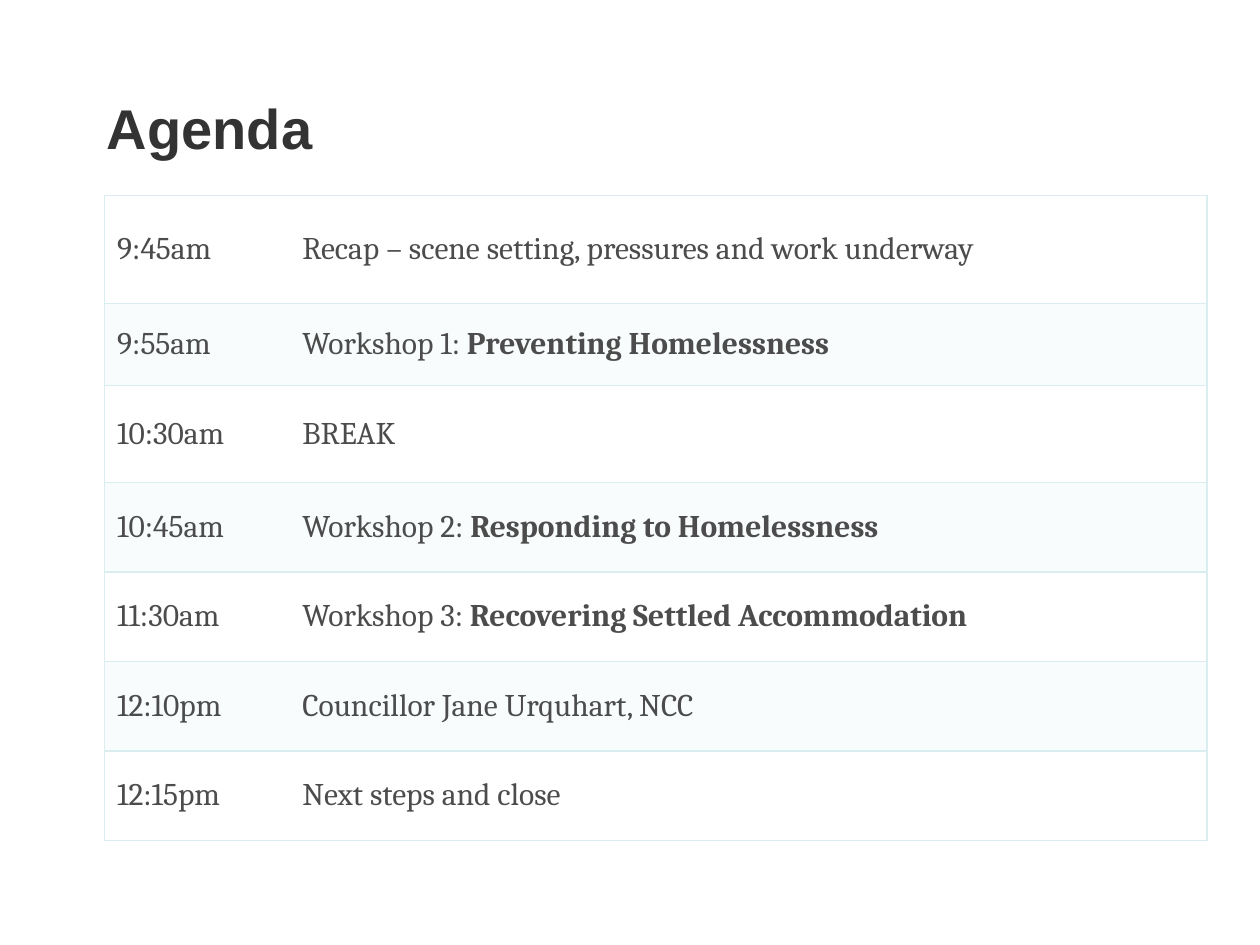
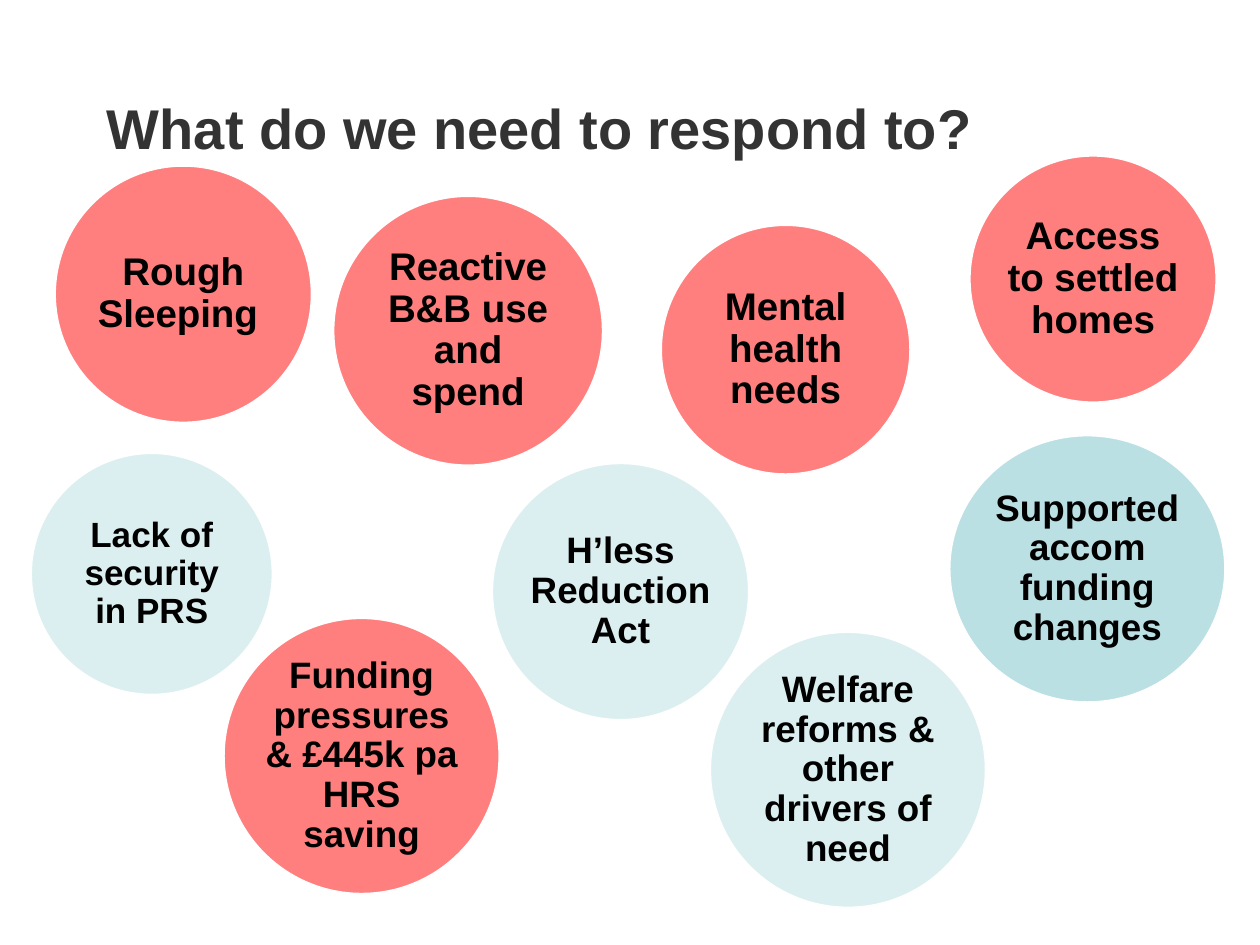
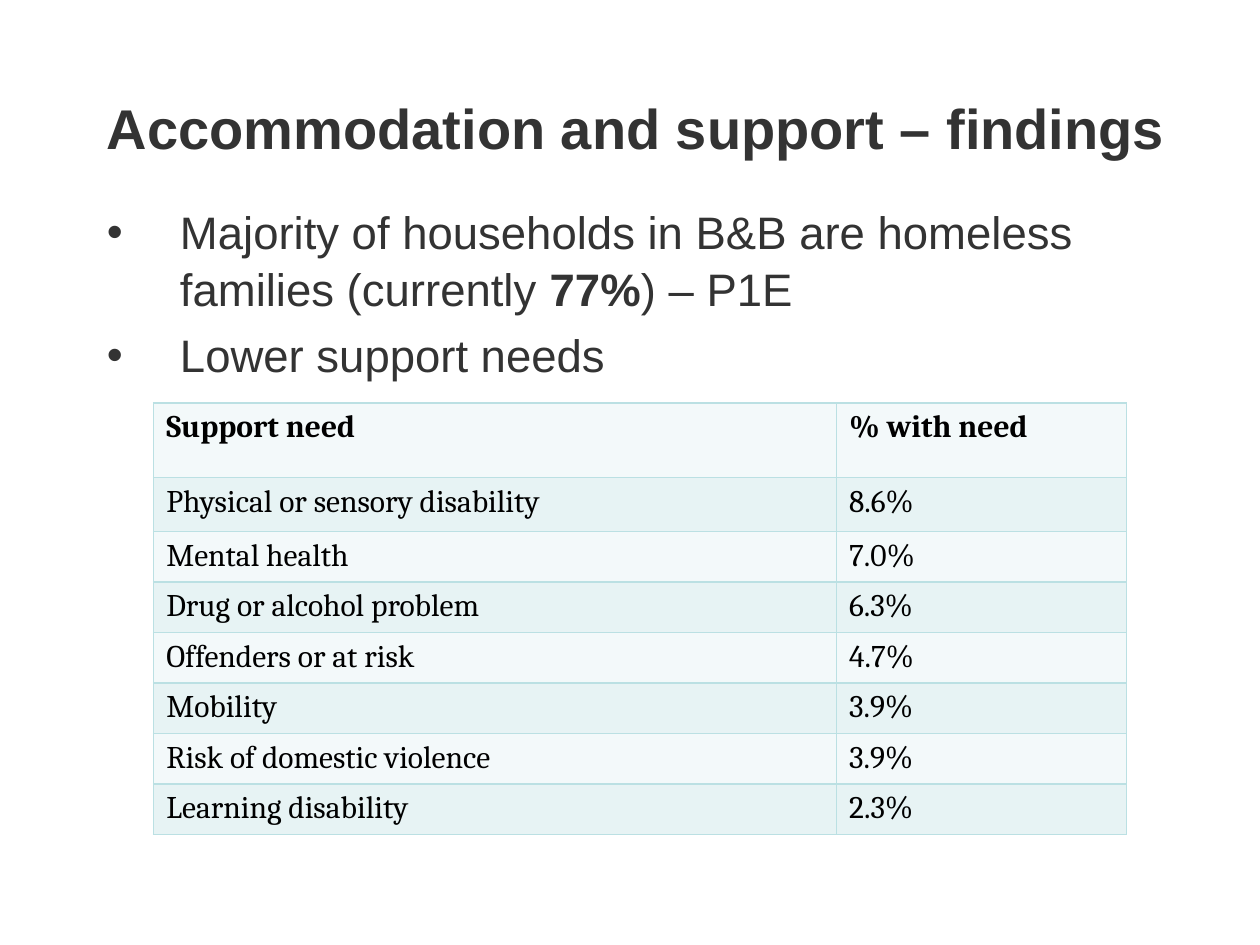
from lxml import etree
from pptx import Presentation
from pptx import util as u
from pptx.dml.color import RGBColor
from pptx.enum import shapes, text
from pptx.oxml.ns import qn

Inches, Pt = u.Inches, u.Pt

# Shared colours and fonts
BLACK = RGBColor(0x00, 0x00, 0x00)
WHITE = RGBColor(0xFF, 0xFF, 0xFF)
DARK = RGBColor(0x33, 0x33, 0x33)
GREY = RGBColor(0x4C, 0x4C, 0x4C)
RED = RGBColor(0xFF, 0x00, 0x00)
TEAL = RGBColor(0xBB, 0xE0, 0xE3)
PALE_TEAL = RGBColor(0xDA, 0xED, 0xEF)
AGENDA_BANDS = (WHITE, RGBColor(0xF8, 0xFC, 0xFC))
NEEDS_BANDS = (RGBColor(0xF3, 0xF9, 0xFA), RGBColor(0xE7, 0xF3, 0xF4))
HEAD_FONT, TABLE_FONT = "Arial", "Cambria"

# Slide content; asterisks enclose bold words
AGENDA = [
    ("9:45am", "Recap – scene setting, pressures and work underway"),
    ("9:55am", "Workshop 1: *Preventing Homelessness*"),
    ("10:30am", "BREAK"),
    ("10:45am", "Workshop 2: *Responding to Homelessness*"),
    ("11:30am", "Workshop 3: *Recovering Settled Accommodation*"),
    ("12:10pm", "Councillor Jane Urquhart, NCC"),
    ("12:15pm", "Next steps and close"),
]
# Left, top, width, height, colour, opacity in percent, text size, text
PRESSURES = [
    (0.43, 1.31, 2.05, 2.05, RED, 50, 22, "Rough Sleeping "),
    (2.64, 1.55, 2.15, 2.15, RED, 50, 22, "Reactive B&B use and spend"),
    (1.77, 4.9, 2.2, 2.2, RED, 50, 21, "Funding pressures & £445k pa HRS saving"),
    (5.24, 1.78, 1.99, 1.99, RED, 50, 22, "Mental health needs"),
    (7.69, 1.23, 1.97, 1.97, RED, 50, 22, "Access to settled homes"),
    (5.63, 5.01, 2.2, 2.2, TEAL, 50, 21, "Welfare reforms & other drivers of need"),
    (3.9, 3.67, 2.05, 2.05, TEAL, 50, 21, "H’less Reduction Act"),
    (0.24, 3.59, 1.93, 1.93, TEAL, 50, 20, "Lack of security in PRS"),
    (7.53, 3.45, 2.2, 2.13, TEAL, 100, 21, "Supported accom funding changes"),
]
FINDINGS = [
    "Majority of households in B&B are homeless families (currently *77%*) – P1E",
    "Lower support needs",
]
NEEDS = [
    ("*Support need*", "*% with need*"),
    ("Physical or sensory disability", "8.6%"),
    ("Mental health", "7.0%"),
    ("Drug or alcohol problem", "6.3%"),
    ("Offenders or at risk", "4.7%"),
    ("Mobility", "3.9%"),
    ("Risk of domestic violence", "3.9%"),
    ("Learning disability", "2.3%"),
]


def write(p, marked, size, color, font):
    """Fill a paragraph, making the words between asterisks bold."""
    for i, part in enumerate(marked.split("*")):
        if part:
            r = p.add_run()
            r.text = part
            r.font.name, r.font.size = font, Pt(size)
            r.font.bold = i % 2 == 1
            r.font.color.rgb = color


def add_text_box(s, left, top, width, height):
    tf = s.shapes.add_textbox(Inches(left), Inches(top), Inches(width), Inches(height)).text_frame
    tf.word_wrap = True
    return tf


def add_title(s, title):
    p = add_text_box(s, 0.75, 0.67, 8.92, 1.25).paragraphs[0]
    p.line_spacing = 1.05
    write(p, f"*{title}*", 32, DARK, HEAD_FONT)


def add_bullets(s, items):
    tf = add_text_box(s, 0.75, 1.55, 8.92, 4.73)
    for i, item in enumerate(items):
        p = tf.add_paragraph() if i else tf.paragraphs[0]
        p.line_spacing, p.space_before = 1.05, Pt(5)
        pPr = p._p.get_or_add_pPr()
        pPr.set("marL", str(Inches(0.58)))
        pPr.set("indent", str(-Inches(0.58)))
        etree.SubElement(pPr, qn("a:buFont"), typeface=HEAD_FONT)
        etree.SubElement(pPr, qn("a:buChar"), char="•")
        write(p, item, 26, DARK, HEAD_FONT)


def add_pressure(s, left, top, width, height, color, opacity, size, label):
    sp = s.shapes.add_shape(shapes.MSO_SHAPE.OVAL, Inches(left), Inches(top),
                            Inches(width), Inches(height))
    sp.shadow.inherit = False
    sp.fill.solid()
    sp.fill.fore_color.rgb = color
    clr = sp.fill._xPr.find(qn("a:solidFill"))[0]
    etree.SubElement(clr, qn("a:alpha"), val=str(opacity * 1000))
    sp.line.color.rgb, sp.line.width = WHITE, Pt(2)
    tf = sp.text_frame
    tf.word_wrap = True
    tf.margin_left = tf.margin_right = tf.margin_top = tf.margin_bottom = 0
    tf.vertical_anchor = text.MSO_ANCHOR.MIDDLE
    p = tf.paragraphs[0]
    p.alignment, p.line_spacing = text.PP_ALIGN.CENTER, 0.9
    write(p, f"*{label}*", size, BLACK, HEAD_FONT)


def set_borders(cell, color, hidden):
    tcPr = cell._tc.get_or_add_tcPr()
    for side in "LRTB":
        ln = etree.SubElement(tcPr, qn(f"a:ln{side}"), w=str(Pt(1)))
        if side in hidden:
            etree.SubElement(ln, qn("a:noFill"))
        else:
            fill = etree.SubElement(ln, qn("a:solidFill"))
            etree.SubElement(fill, qn("a:srgbClr"), val=str(color))


def add_banded_table(s, left, top, widths, heights, rows, bands, border, color,
                     anchor=text.MSO_ANCHOR.TOP, inner_vertical=True):
    tbl = s.shapes.add_table(len(rows), len(widths), Inches(left), Inches(top),
                             Inches(sum(widths)), Inches(sum(heights))).table
    tbl.first_row = tbl.horz_banding = False
    for col, width in zip(tbl.columns, widths):
        col.width = Inches(width)
    for i, (row, height) in enumerate(zip(rows, heights)):
        tbl.rows[i].height = Inches(height)
        for j, value in enumerate(row):
            cell = tbl.cell(i, j)
            hidden = "" if inner_vertical else "R" if j == 0 else "L"
            set_borders(cell, border, hidden)
            cell.fill.solid()
            cell.fill.fore_color.rgb = bands[i % 2]
            cell.vertical_anchor = anchor
            write(cell.text_frame.paragraphs[0], value, 18, color, TABLE_FONT)


def main():
    prs = Presentation()
    prs.slide_width, prs.slide_height = Inches(10), Inches(7.5)
    blank = prs.slide_layouts[6]

    # Agenda
    s = prs.slides.add_slide(blank)
    add_banded_table(s, 0.83, 1.55, [1.47, 7.28], [0.86, 0.65, 0.77] + [0.71] * 4,
                     AGENDA, AGENDA_BANDS, PALE_TEAL, GREY,
                     text.MSO_ANCHOR.MIDDLE, inner_vertical=False)
    add_title(s, "Agenda")

    # Pressures
    s = prs.slides.add_slide(blank)
    add_title(s, "What do we need to respond to?")
    for pressure in PRESSURES:
        add_pressure(s, *pressure)

    # Findings
    s = prs.slides.add_slide(blank)
    add_title(s, "Accommodation and support – findings")
    add_bullets(s, FINDINGS)
    add_banded_table(s, 1.22, 3.2, [5.42, 2.3], [0.59, 0.43] + [0.35] * 6,
                     NEEDS, NEEDS_BANDS, TEAL, BLACK)

    prs.save("out.pptx")


if __name__ == "__main__":
    main()
